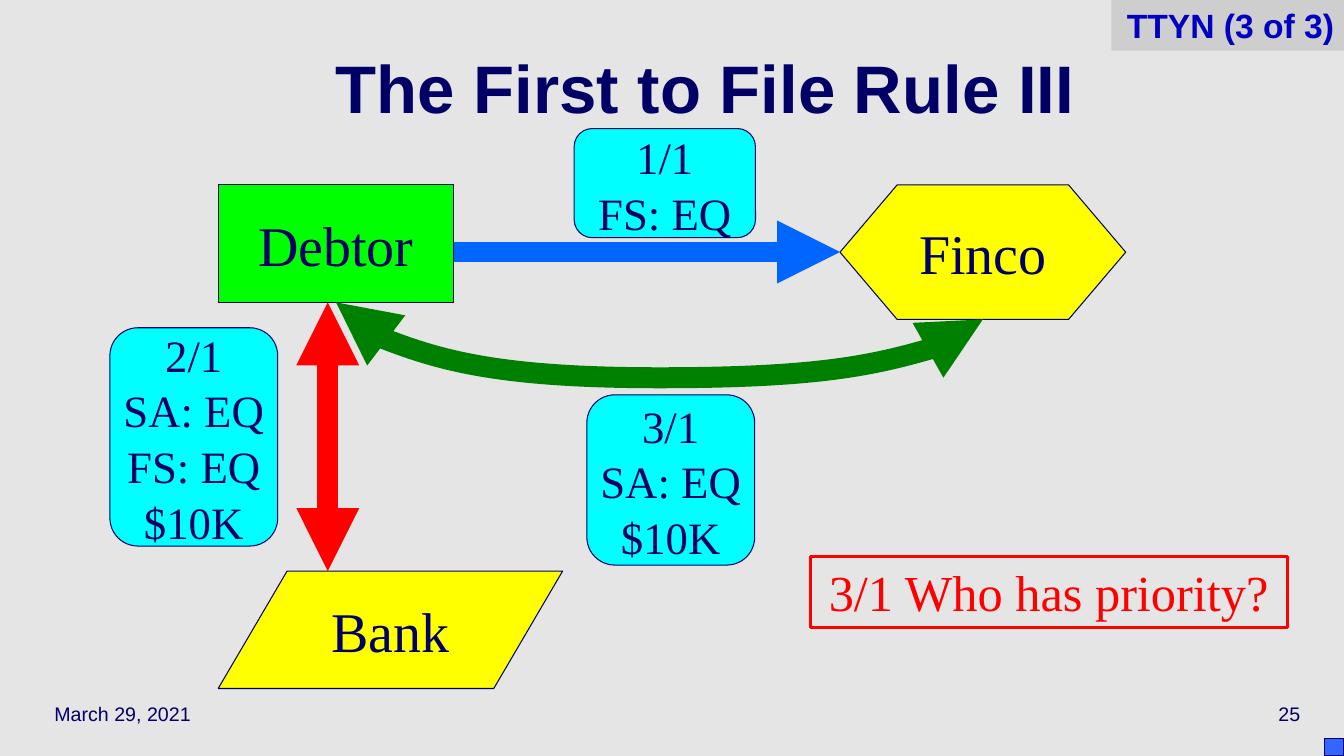
from dataclasses import dataclass

from lxml import etree
from pptx import Presentation
from pptx.dml.color import RGBColor
from pptx.enum.shapes import MSO_CONNECTOR, MSO_SHAPE
from pptx.enum.text import MSO_ANCHOR, MSO_AUTO_SIZE, PP_ALIGN
from pptx.oxml.ns import qn
from pptx.shapes.connector import Connector
from pptx.slide import Slide
from pptx.util import Cm, Pt

RECTANGLE = MSO_SHAPE.RECTANGLE
PROCESS = MSO_SHAPE.FLOWCHART_PROCESS
PREPARATION = MSO_SHAPE.FLOWCHART_PREPARATION
INPUT_OUTPUT = MSO_SHAPE.FLOWCHART_DATA
ROUNDED = MSO_SHAPE.FLOWCHART_ALTERNATE_PROCESS
STRAIGHT, CURVE = MSO_CONNECTOR.STRAIGHT, MSO_CONNECTOR.CURVE
LEFT, CENTER, RIGHT = PP_ALIGN.LEFT, PP_ALIGN.CENTER, PP_ALIGN.RIGHT
TOP, MIDDLE = MSO_ANCHOR.TOP, MSO_ANCHOR.MIDDLE
FIT_TEXT = MSO_AUTO_SIZE.SHAPE_TO_FIT_TEXT


@dataclass(frozen=True)
class Theme:
    background: str = "E5E5E5"
    tag_fill: str = "CECECE"
    navy: str = "000066"
    tag_text: str = "0000C0"
    yellow: str = "FFFF00"
    lime: str = "00FF00"
    cyan: str = "00FFFF"
    red: str = "FF0000"
    blue: str = "0066FF"
    green: str = "008000"
    corner: str = "3366FF"
    sans: str = "Arial"
    serif: str = "Times New Roman"
    title_size: int = 48
    party_size: int = 40
    question_size: int = 36
    event_size: int = 32
    tag_size: int = 24
    footer_size: int = 14
    outline: float = 0.75
    question_outline: float = 2
    arrow: float = 15


THEME = Theme()


@dataclass(frozen=True)
class Block:
    box: tuple[float, float, float, float]
    text: str = ""
    size: int = THEME.event_size
    fill: str | None = None
    line: str | None = None
    line_width: float = THEME.outline
    form: MSO_SHAPE = RECTANGLE
    font: str = THEME.serif
    color: str = THEME.navy
    bold: bool = False
    align: PP_ALIGN = CENTER
    anchor: MSO_ANCHOR = MIDDLE
    wrap: bool = True
    spacing: float = 1.0


@dataclass(frozen=True)
class Arrow:
    start: tuple[float, float]
    end: tuple[float, float]
    color: str
    two_headed: bool = True
    sag: float = 0


def party(name: str, form: MSO_SHAPE, fill: str,
          box: tuple[float, float, float, float]) -> Block:
    return Block(box, name, THEME.party_size, fill, THEME.navy, form=form, wrap=False)


def event(text: str, box: tuple[float, float, float, float]) -> Block:
    return Block(box, text, THEME.event_size, THEME.cyan, THEME.navy,
                 form=ROUNDED, wrap=False, spacing=1.04)


def footer(text: str, left: float, align: PP_ALIGN) -> Block:
    return Block((left, 17.35, 7.06, 1.27), text, THEME.footer_size,
                 font=THEME.sans, align=align)


HEADINGS = [
    footer("March 29, 2021", 1.12, LEFT),
    footer("25", 25.96, RIGHT),
    Block((2.26, 0.85, 31.04, 3.18), "The First to File Rule III", THEME.title_size,
          font=THEME.sans, bold=True, spacing=0.7),
]
PARTIES = [
    party("Bank", INPUT_OUTPUT, THEME.yellow, (5.5, 14.39, 8.68, 2.96)),
    party("Debtor", PROCESS, THEME.lime, (5.5, 4.66, 5.93, 2.96)),
    party("Finco", PREPARATION, THEME.yellow, (21.17, 4.66, 7.2, 3.39)),
]
ARROWS = [
    Arrow((11.43, 6.35), (21.17, 6.35), THEME.blue, two_headed=False),
    Arrow((8.26, 7.62), (8.26, 14.39), THEME.red),
    Arrow((8.47, 7.62), (24.77, 8.05), THEME.green, sag=1.9),
]
EVENTS = [
    event("3/1\nSA: EQ\n$10K", (14.79, 9.95, 4.23, 4.29)),
    event("2/1\nSA: EQ\nFS: EQ\n$10K", (2.77, 8.26, 4.23, 5.5)),
    event("1/1\nFS: EQ", (14.47, 3.24, 4.57, 2.75)),
]
NOTES = [
    Block((20.42, 14.02, 12.02, 1.8), "3/1 Who has priority?", THEME.question_size,
          line=THEME.red, line_width=THEME.question_outline, color=THEME.red, anchor=TOP),
    Block((33.38, 18.62, 0.48, 0.43), fill=THEME.corner, line=THEME.navy),
    Block((28.01, 0, 5.86, 1.28), "TTYN (3 of 3)", THEME.tag_size, THEME.tag_fill,
          font=THEME.sans, color=THEME.tag_text, bold=True, align=RIGHT, anchor=TOP),
]


def rgb(color: str) -> RGBColor:
    return RGBColor.from_string(color)


def draw_block(slide: Slide, block: Block) -> None:
    box = [Cm(length) for length in block.box]
    if block.fill or block.line:
        shape = slide.shapes.add_shape(block.form, *box)
        shape.shadow.inherit = False
        if block.fill:
            shape.fill.solid()
            shape.fill.fore_color.rgb = rgb(block.fill)
        else:
            shape.fill.background()
        if block.line:
            shape.line.color.rgb = rgb(block.line)
            shape.line.width = Pt(block.line_width)
        else:
            shape.line.fill.background()
    else:
        shape = slide.shapes.add_textbox(*box)
    if not block.text:
        return
    frame = shape.text_frame
    frame.text = block.text
    frame.word_wrap = block.wrap
    frame.vertical_anchor = block.anchor
    if block.anchor == TOP:
        frame.auto_size = FIT_TEXT
    for paragraph in frame.paragraphs:
        paragraph.alignment = block.align
        paragraph.line_spacing = block.spacing
        for run in paragraph.runs:
            run.font.name = block.font
            run.font.size = Pt(block.size)
            run.font.bold = block.bold
            run.font.color.rgb = rgb(block.color)


def add_curve(slide: Slide, arrow: Arrow) -> Connector:
    (x1, y1), (x2, y2) = arrow.start, arrow.end
    middle_x, middle_y = (x1 + x2) / 2, (y1 + y2) / 2
    half_run, half_drop = (x2 - x1) / 2, (y2 - y1) / 2
    curve = slide.shapes.add_connector(
        CURVE, Cm(middle_x + half_drop), Cm(middle_y - half_run),
        Cm(middle_x - half_drop), Cm(middle_y + half_run))
    properties = curve._element.spPr
    properties.find(qn("a:xfrm")).set("rot", str(270 * 60000))
    adjustments = properties.find(qn("a:prstGeom")).find(qn("a:avLst"))
    bend = round(arrow.sag / (y2 - y1) * 100000)
    etree.SubElement(adjustments, qn("a:gd"), name="adj1", fmla=f"val {bend}")
    return curve


def draw_arrow(slide: Slide, arrow: Arrow) -> None:
    if arrow.sag:
        connector = add_curve(slide, arrow)
    else:
        connector = slide.shapes.add_connector(
            STRAIGHT, *(Cm(length) for length in arrow.start + arrow.end))
    connector.line.color.rgb = rgb(arrow.color)
    connector.line.width = Pt(THEME.arrow)
    properties = connector._element.spPr
    outline = properties.find(qn("a:ln"))
    if arrow.two_headed:
        etree.SubElement(outline, qn("a:headEnd"), type="triangle")
    etree.SubElement(outline, qn("a:tailEnd"), type="triangle")
    etree.SubElement(properties, qn("a:effectLst"))


def main() -> None:
    presentation = Presentation()
    presentation.slide_width, presentation.slide_height = Cm(33.87), Cm(19.05)
    slide = presentation.slides.add_slide(presentation.slide_layouts[6])
    slide.background.fill.solid()
    slide.background.fill.fore_color.rgb = rgb(THEME.background)
    for block in HEADINGS + PARTIES:
        draw_block(slide, block)
    for arrow in ARROWS:
        draw_arrow(slide, arrow)
    for block in EVENTS + NOTES:
        draw_block(slide, block)
    presentation.save("out.pptx")


if __name__ == "__main__":
    main()
